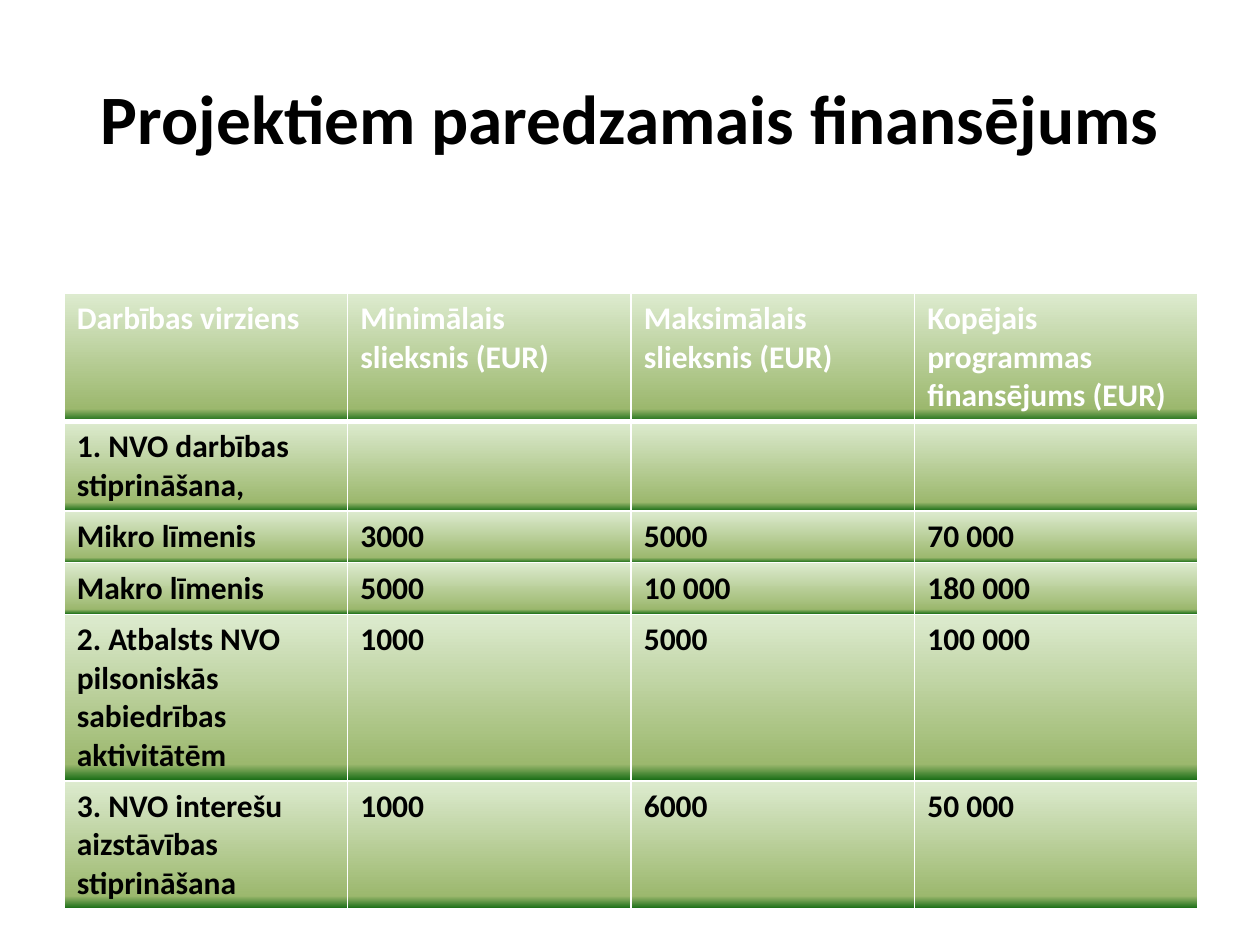
"""Build the slide with the project funding table."""
from lxml.etree import SubElement
from pptx import Presentation
from pptx.dml.color import RGBColor
from pptx.enum.text import MSO_ANCHOR, PP_ALIGN
from pptx.oxml.ns import qn
from pptx.util import Inches, Pt

COLORS = {"white": "FFFFFF", "black": "000000", "light": "DDEBCF", "green": "9CB86E", "dark": "156B13"}
GRADIENT = [(0, "light"), (90, "green"), (100, "dark")]
ROWS = [
    ["Darbības virziens", "Minimālais slieksnis (EUR)", "Maksimālais slieksnis (EUR)",
     "Kopējais programmas finansējums (EUR)"],
    ["1. NVO darbības stiprināšana,", "", "", ""],
    ["Mikro līmenis", "3000", "5000", "70 000"],
    ["Makro līmenis", "5000", "10 000", "180 000"],
    ["2. Atbalsts NVO pilsoniskās sabiedrības aktivitātēm", "1000", "5000", "100 000"],
    ["3. NVO interešu aizstāvības stiprināšana", "1000", "6000", "50 000"],
]


def add_text(paragraph, text, size, color):
    paragraph.font.size = Pt(size)
    if text:
        run = paragraph.add_run()
        run.text = text
        run.font.name = "Calibri"
        run.font.size = Pt(size)
        run.font.bold = True
        run.font.color.rgb = RGBColor.from_string(COLORS[color])


def style_cell(cell, borders):
    properties = cell._tc.get_or_add_tcPr()
    for side, width in borders.items():
        line = SubElement(properties, qn(f"a:ln{side}"), w=str(Pt(width)))
        fill = SubElement(line, qn("a:solidFill"))
        SubElement(fill, qn("a:srgbClr"), val=COLORS["white"])
    gradient = SubElement(properties, qn("a:gradFill"), rotWithShape="1")
    stops = SubElement(gradient, qn("a:gsLst"))
    for position, color in GRADIENT:
        stop = SubElement(stops, qn("a:gs"), pos=str(position * 1000))
        SubElement(stop, qn("a:srgbClr"), val=COLORS[color])
    SubElement(gradient, qn("a:lin"), ang=str(90 * 60000), scaled="0")


presentation = Presentation()
presentation.slide_width = Inches(10)
presentation.slide_height = Inches(7.5)
slide = presentation.slides.add_slide(presentation.slide_layouts[6])

table_frame = slide.shapes.add_table(len(ROWS), len(ROWS[0]), Inches(0.51), Inches(2.33), Inches(9), Inches(4.81))
table = table_frame.table
for row_index, texts in enumerate(ROWS):
    table.rows[row_index].height = Inches(0.41)
    for column_index, text in enumerate(texts):
        cell = table.cell(row_index, column_index)
        add_text(cell.text_frame.paragraphs[0], text, 18, "black" if row_index else "white")
        top = 3 if row_index == 1 else 1
        bottom = 1 if row_index else 3
        style_cell(cell, {"L": 1, "R": 1, "T": top, "B": bottom})
table_frame.height = Inches(4.81)

title = slide.shapes.add_textbox(Inches(0.5), Inches(0.3), Inches(9), Inches(1.25))
title.text_frame.word_wrap = True
title.text_frame.vertical_anchor = MSO_ANCHOR.MIDDLE
title_paragraph = title.text_frame.paragraphs[0]
title_paragraph.alignment = PP_ALIGN.CENTER
add_text(title_paragraph, "Projektiem paredzamais finansējums", 39.6, "black")

presentation.save("out.pptx")
